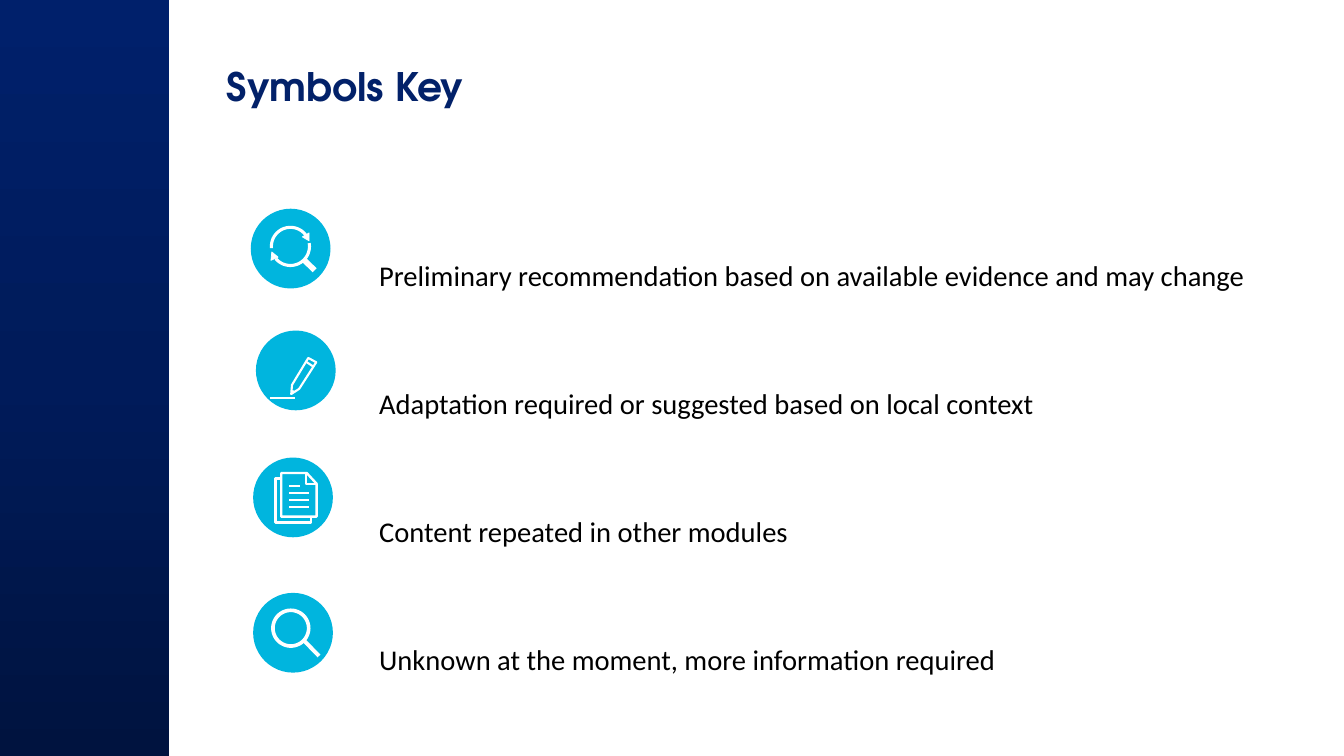
from copy import deepcopy
from math import cos, radians, sin

from lxml.etree import SubElement
from pptx import Presentation
from pptx.dml.color import RGBColor
from pptx.enum.shapes import MSO_CONNECTOR as Link, MSO_SHAPE as Preset
from pptx.enum.text import MSO_ANCHOR as Anchor, PP_ALIGN as Align
from pptx.oxml.ns import qn
from pptx.util import Cm, Pt

TITLE = "Symbols Key"
LINES = [
    "Preliminary recommendation based on available evidence and may change",
    "Adaptation required or suggested based on local context",
    "Content repeated in other modules",
    "Unknown at the moment, more information required",
]
COLORS = {
    "low": "00133F", "mid": "001B5A", "high": "00206B",
    "title": "022169", "text": "000000", "disc": "00B5DE", "mark": "FFFFFF",
}
DISC = 2.01


def arc(x, y, r, start, end, step=5):
    """Points along a clockwise arc, angles in degrees from the right."""
    return [(x + r * cos(radians(a)), y + r * sin(radians(a)))
            for a in range(start, end + 1, step)]


# Strokes are (kind, points, width in pt); points are cm from the disc corner.
RETRY = [
    ("open", arc(1, 0.95, 0.48, 175, 325), 2.2),
    ("open", arc(1, 0.95, 0.48, -10, 140), 2.2),
    ("solid", [(1.3, 0.71), (1.47, 0.81), (1.47, 0.61)], 0.5),
    ("solid", [(0.69, 1.22), (0.53, 1.09), (0.51, 1.3)], 0.5),
    ("line", [(1.33, 1.28), (1.61, 1.55)], 4),
]
PENCIL = [
    ("closed", [(1.09, 1.47), (0.89, 1.6), (0.91, 1.37), (1.32, 0.69),
                (1.52, 0.8)], 1.5),
    ("line", [(1.27, 0.79), (1.45, 0.91)], 1.5),
    ("line", [(0.91, 1.52), (0.97, 1.55)], 1.5),
    ("line", [(0.36, 1.7), (0.99, 1.7)], 1.5),
]
PAGES = [
    ("closed", [(0.71, 0.39), (1.35, 0.39), (1.6, 0.66), (1.6, 1.49),
                (0.71, 1.49)], 1.7),
    ("open", [(1.33, 0.39), (1.33, 0.66), (1.6, 0.66)], 1.7),
    ("open", [(0.71, 0.53), (0.56, 0.53), (0.56, 1.64), (1.46, 1.64),
              (1.46, 1.49)], 1.7),
] + [
    ("line", [(0.91, 0.71 + 0.18 * i), (end, 0.71 + 0.18 * i)], 1.7)
    for i, end in enumerate([1.17, 1.41, 1.41, 1.41])
]
LENS = [
    ("closed", arc(0.95, 0.89, 0.45, 0, 355), 2.6),
    ("line", [(1.3, 1.22), (1.66, 1.59)], 2.8),
]
ICONS = [(6.32, 5.26, RETRY), (6.45, 8.33, PENCIL),
         (6.38, 11.53, PAGES), (6.38, 14.94, LENS)]


def tint(name):
    return RGBColor.from_string(COLORS[name])


def place(shape, left, top, width, height):
    shape.left, shape.top = Cm(left), Cm(top)
    shape.width, shape.height = Cm(width), Cm(height)


def write(para, text, font, size, color, bold=False):
    para.alignment = Align.LEFT
    run = para.add_run()
    run.text = text
    run.font.name, run.font.size, run.font.bold = font, Pt(size), bold
    run.font.color.rgb = tint(color)


def draw_panel(shapes):
    panel = shapes.add_shape(Preset.RECTANGLE, 0, 0, Cm(4.27), Cm(19.05))
    panel.shadow.inherit = False
    panel.line.fill.background()
    panel.fill.gradient()
    panel.fill.gradient_angle = 90
    first, last = panel.fill.gradient_stops
    first.color.rgb, last.color.rgb = tint("low"), tint("high")
    first.position, last.position = 0, 1
    stops = panel.element.spPr.find(qn("a:gradFill")).find(qn("a:gsLst"))
    mid = deepcopy(stops[0])
    mid.set("pos", "50000")
    mid[0].set("val", COLORS["mid"])
    stops.insert(1, mid)


def draw_stroke(shapes, left, top, kind, points, width):
    spots = [(Cm(left + x), Cm(top + y)) for x, y in points]
    if kind == "line":
        mark = shapes.add_connector(Link.STRAIGHT, *spots[0], *spots[1])
        SubElement(mark.element.spPr, qn("a:effectLst"))
    else:
        path = shapes.build_freeform(*spots[0])
        path.add_line_segments(spots[1:], close=kind != "open")
        mark = path.convert_to_shape()
        mark.shadow.inherit = False
        if kind == "solid":
            mark.fill.solid()
            mark.fill.fore_color.rgb = tint("mark")
        else:
            mark.fill.background()
    mark.line.color.rgb = tint("mark")
    mark.line.width = Pt(width)


def draw_icon(shapes, left, top, strokes):
    disc = shapes.add_shape(Preset.OVAL, Cm(left), Cm(top), Cm(DISC), Cm(DISC))
    disc.shadow.inherit = False
    disc.fill.solid()
    disc.fill.fore_color.rgb = tint("disc")
    disc.line.fill.background()
    for stroke in strokes:
        draw_stroke(shapes, left, top, *stroke)


def main():
    deck = Presentation()
    deck.slide_width, deck.slide_height = Cm(33.87), Cm(19.05)
    slide = deck.slides.add_slide(deck.slide_layouts[1])
    shapes = slide.shapes
    draw_panel(shapes)

    title = shapes.title
    place(title, 5.46, 1.45, 25.4, 2.34)
    title.text_frame.vertical_anchor = Anchor.TOP
    write(title.text_frame.paragraphs[0], TITLE,
          "TeX Gyre Adventor", 28, "title", True)

    body = slide.placeholders[1]
    place(body, 9.3, 4.42, 22.56, 12.22)
    frame = body.text_frame
    frame.vertical_anchor = Anchor.TOP
    for i, line in enumerate(LINES):
        para = frame.add_paragraph() if i else frame.paragraphs[0]
        props = para._p.get_or_add_pPr()
        props.set("marL", "0")
        props.set("indent", "0")
        SubElement(props, qn("a:buNone"))
        para.line_spacing = 3.25
        para.space_before, para.space_after = Pt(0), Pt(12)
        write(para, line, "Calibri", 20.4, "text")

    for icon in ICONS:
        draw_icon(shapes, *icon)
    deck.save("out.pptx")


if __name__ == "__main__":
    main()
